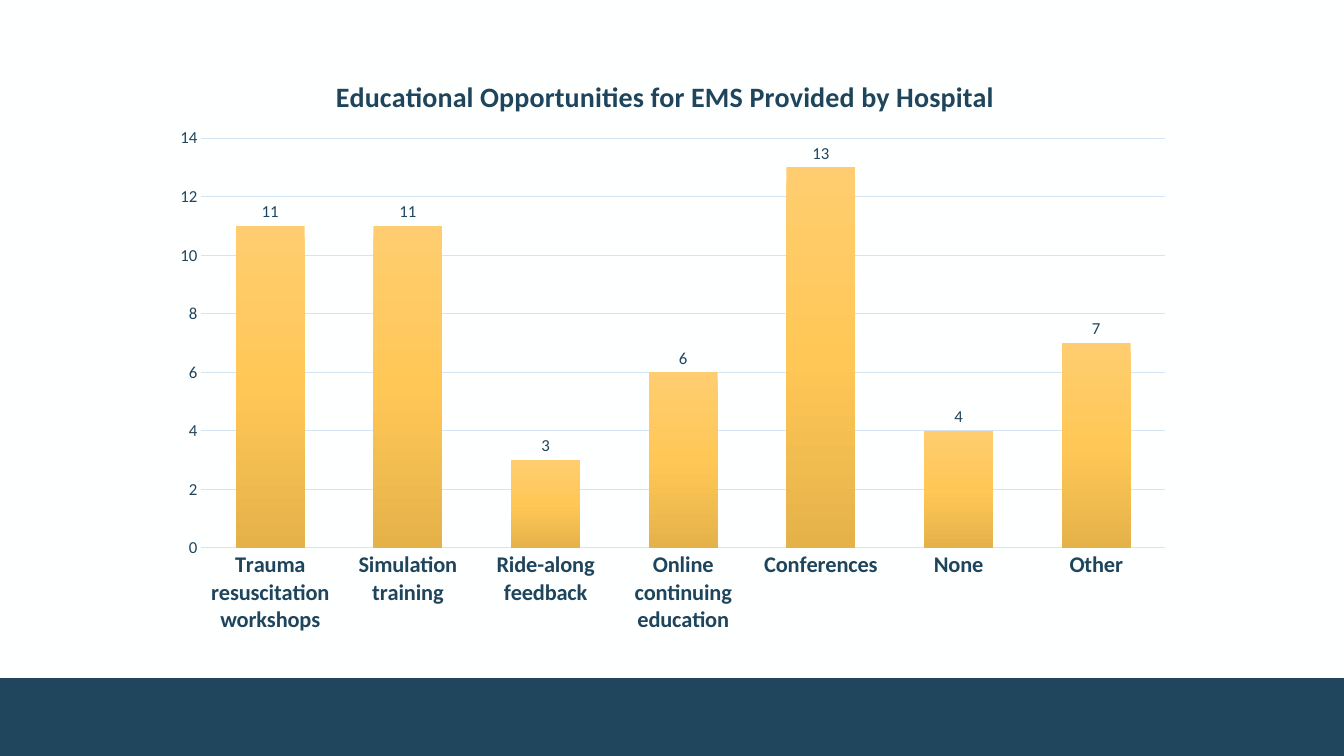
from lxml.etree import SubElement
from pptx import Presentation
from pptx.chart.data import CategoryChartData
from pptx.dml.color import RGBColor
from pptx.enum.chart import XL_CHART_TYPE, XL_LABEL_POSITION, XL_TICK_MARK
from pptx.enum.shapes import MSO_SHAPE
from pptx.oxml import parse_xml
from pptx.oxml.ns import nsdecls, qn
from pptx.util import Inches, Pt

WIDTH, HEIGHT = Inches(13.33), Inches(7.5)
BACKGROUND, BAND, TEXT, GRID = "FEFFFF", "20465E", "1F455D", "D4E5F1"
BAR_STOPS = {0: "FFCD70", 50: "FFC756", 100: "E5B24A"}
TITLE = "Educational Opportunities for EMS Provided by Hospital"
HOSPITALS = {
    "Trauma resuscitation workshops": 11,
    "Simulation training": 11,
    "Ride-along feedback": 3,
    "Online continuing education": 6,
    "Conferences": 13,
    "None": 4,
    "Other": 7,
}


def color(value):
    return RGBColor.from_string(value)


def style_font(font, size, bold=False):
    for name, value in {"name": "Calibri", "size": Pt(size), "bold": bold}.items():
        setattr(font, name, value)
    font.color.rgb = color(TEXT)


def style_line(line):
    line.color.rgb = color(GRID)
    line.width = Pt(0.75)


def place(parent, **shares):
    """Fix a chart part's position, given as shares of the chart's size."""
    for old in parent.findall(qn("c:layout")):
        parent.remove(old)
    layout = parse_xml(f"<c:layout {nsdecls('c')}/>")
    text = parent.find(qn("c:tx"))
    parent.insert(0 if text is None else 1, layout)
    manual = SubElement(layout, qn("c:manualLayout"))
    if "w" in shares:
        SubElement(manual, qn("c:layoutTarget")).set("val", "inner")
    for axis in "xy":
        SubElement(manual, qn(f"c:{axis}Mode")).set("val", "edge")
    for name, share in shares.items():
        SubElement(manual, qn(f"c:{name}")).set("val", str(share))


def fill_gradient(series, stops):
    stop_xml = "".join(
        f'<a:gs pos="{position * 1000}"><a:srgbClr val="{value}"/></a:gs>'
        for position, value in stops.items()
    )
    properties = series.format._element.get_or_add_spPr()
    properties.insert(0, parse_xml(
        f'<a:gradFill {nsdecls("a")} rotWithShape="1"><a:gsLst>{stop_xml}</a:gsLst>'
        '<a:lin ang="5400000" scaled="0"/></a:gradFill>'
    ))
    series.format.line.fill.background()


def add_band(slide):
    top = int(HEIGHT * 0.897)
    band = slide.shapes.add_shape(MSO_SHAPE.RECTANGLE, 0, top, WIDTH, HEIGHT - top)
    band.shadow.inherit = False
    band.fill.solid()
    band.fill.fore_color.rgb = color(BAND)
    band.line.fill.background()


def add_title(chart):
    chart.has_title = True
    title = chart.chart_title
    title.include_in_layout = False
    paragraph = title.text_frame.paragraphs[0]
    run = paragraph.add_run()
    run.text = TITLE
    style_font(run.font, 20, bold=True)
    place(title._element, x=0.167, y=0.045)


def style_axes(chart):
    category_axis, value_axis = chart.category_axis, chart.value_axis
    for axis in (category_axis, value_axis):
        axis.major_tick_mark = axis.minor_tick_mark = XL_TICK_MARK.NONE
    style_font(category_axis.tick_labels.font, 16, bold=True)
    style_line(category_axis.format.line)
    style_font(value_axis.tick_labels.font, 12)
    style_line(value_axis.major_gridlines.format.line)
    value_axis.format.line.fill.background()
    scale = {"minimum_scale": 0, "maximum_scale": 14, "major_unit": 2}
    for name, value in scale.items():
        setattr(value_axis, name, value)


def style_bars(plot):
    plot.gap_width, plot.overlap, plot.vary_by_categories = 100, -24, False
    series = plot.series[0]
    fill_gradient(series, BAR_STOPS)
    labels = series.data_labels
    labels.show_value = True
    labels.position = XL_LABEL_POSITION.OUTSIDE_END
    style_font(labels.font, 12)


def add_column_chart(slide):
    data = CategoryChartData()
    data.categories = list(HOSPITALS)
    data.add_series("Series 1", list(HOSPITALS.values()))
    chart = slide.shapes.add_chart(
        XL_CHART_TYPE.COLUMN_CLUSTERED,
        Inches(1.58), Inches(0.44), Inches(10.18), Inches(5.97), data,
    ).chart
    chart.has_legend = False
    style_font(chart.font, 10)
    add_title(chart)
    style_axes(chart)
    style_bars(chart.plots[0])
    plot_area = chart._chartSpace.chart.plotArea
    place(plot_area, x=0.041, y=0.156, w=0.939, h=0.681)


def main():
    presentation = Presentation()
    presentation.slide_width, presentation.slide_height = WIDTH, HEIGHT
    slide = presentation.slides.add_slide(presentation.slide_layouts[6])
    slide.background.fill.solid()
    slide.background.fill.fore_color.rgb = color(BACKGROUND)
    add_band(slide)
    add_column_chart(slide)
    presentation.save("out.pptx")


if __name__ == "__main__":
    main()
